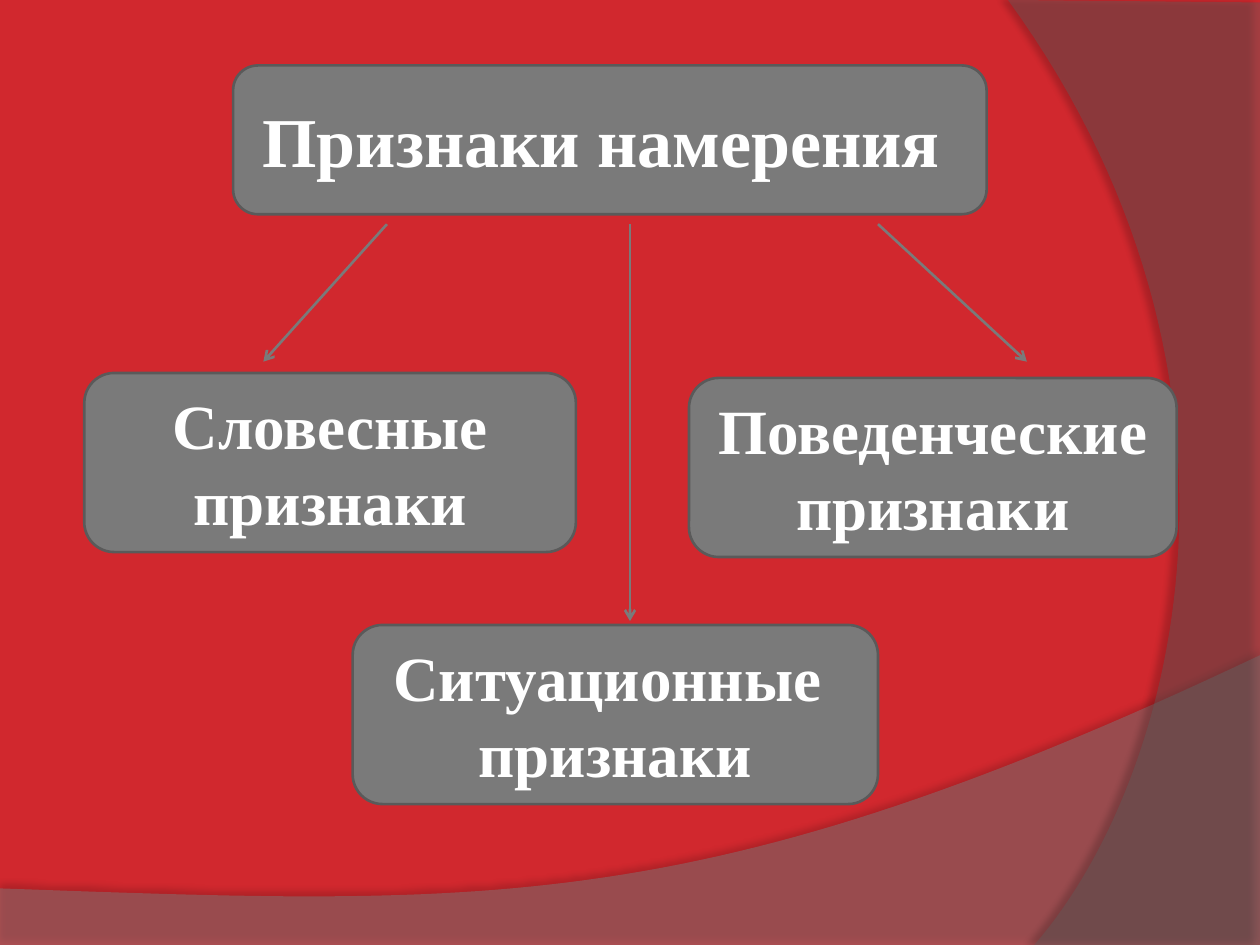
from lxml import etree
from pptx import Presentation
from pptx import util as u
from pptx.dml.color import RGBColor
from pptx.enum import shapes, text
from pptx.oxml.ns import qn

COLORS = {
    "background": "D1282E",
    "wave": "7F7F7F",
    "side": "5E5E5E",
    "box": "7A7A7A",
    "border": "5A5A5A",
    "text": "FFFFFF",
    "shadow": "000000",
}


def rgb(name):
    return RGBColor.from_string(COLORS[name])


def bezier(p0, p1, p2, p3, steps=60):
    """Points along a cubic curve, without its first point."""
    points = []
    for i in range(1, steps + 1):
        t = i / steps
        weights = ((1 - t) ** 3, 3 * t * (1 - t) ** 2, 3 * t * t * (1 - t), t ** 3)
        points.append(tuple(sum(w * p[axis] for w, p in zip(weights, (p0, p1, p2, p3)))
                            for axis in (0, 1)))
    return points


class SlideBuilder:
    font = "Times New Roman"
    line_width = u.Pt(1.5)

    def __init__(self, prs):
        self.slide = prs.slides.add_slide(prs.slide_layouts[6])
        fill = self.slide.background.fill
        fill.solid()
        fill.fore_color.rgb = rgb("background")

    def swoosh(self, corners, controls, end, color, opacity, shadow_opacity, distance, angle):
        """Translucent outline: straight corners, then one curve to its end."""
        points = corners + bezier(corners[-1], *controls, end)
        points = [(u.Cm(x), u.Cm(y)) for x, y in points]
        builder = self.slide.shapes.build_freeform(*points[0])
        builder.add_line_segments(points[1:], close=True)
        sp = builder.convert_to_shape()
        sp.fill.solid()
        sp.fill.fore_color.rgb = rgb(color)
        sp.line.fill.background()
        sp.shadow.inherit = False
        props = sp._element.spPr
        self.set_alpha(props.find(qn("a:solidFill"))[0], opacity)
        shadow = etree.SubElement(
            props.find(qn("a:effectLst")), qn("a:outerShdw"),
            blurRad=str(u.Pt(4)), dist=str(u.Pt(distance)),
            dir=str(angle * 60000), algn="ctr", rotWithShape="0")
        shade = etree.SubElement(shadow, qn("a:srgbClr"), val=COLORS["shadow"])
        self.set_alpha(shade, shadow_opacity)

    @staticmethod
    def set_alpha(color, percent):
        etree.SubElement(color, qn("a:alpha"), val=str(percent * 1000))

    def box(self, left, top, width, height, paragraphs, size=36):
        sp = self.slide.shapes.add_shape(
            shapes.MSO_SHAPE.ROUNDED_RECTANGLE,
            u.Cm(left), u.Cm(top), u.Cm(width), u.Cm(height))
        sp.shadow.inherit = False
        sp.fill.solid()
        sp.fill.fore_color.rgb = rgb("box")
        sp.line.color.rgb = rgb("border")
        sp.line.width = self.line_width
        tf = sp.text_frame
        tf.word_wrap = True
        tf.vertical_anchor = text.MSO_ANCHOR.MIDDLE
        tf.text = "\n".join(paragraphs)
        for p in tf.paragraphs:
            p.alignment = text.PP_ALIGN.CENTER
            p.font.name = self.font
            p.font.size = u.Pt(size)
            p.font.bold = True
            p.font.color.rgb = rgb("text")

    def arrow(self, x1, y1, x2, y2):
        line = self.slide.shapes.add_connector(
            shapes.MSO_CONNECTOR.STRAIGHT, u.Cm(x1), u.Cm(y1), u.Cm(x2), u.Cm(y2))
        line.line.color.rgb = rgb("box")
        line.line.width = self.line_width
        etree.SubElement(line.line._get_or_add_ln(), qn("a:tailEnd"), type="arrow")
        etree.SubElement(line._element.spPr, qn("a:effectLst"))


def main():
    prs = Presentation()
    prs.slide_width, prs.slide_height = u.Cm(25.4), u.Cm(19.05)
    s = SlideBuilder(prs)

    s.swoosh([(0, 17.91), (0, 19.08), (25.4, 19.08), (25.4, 13.21)],
             [(14.2, 18.52), (9.93, 18.26)], (0, 17.91),
             "wave", opacity=45, shadow_opacity=35, distance=3.5, angle=270)
    s.swoosh([(25.4, 0.05), (25.4, 19.05), (20.85, 19.05)],
             [(23.75, 15.72), (25.86, 7.62)], (20.32, 0),
             "side", opacity=40, shadow_opacity=45, distance=4, angle=180)

    s.box(4.7, 1.32, 15.19, 3, ["Признаки намерения "], size=40)
    sign_height = 3.61
    s.box(1.7, 7.52, 9.91, sign_height, ["Словесные признаки"])
    s.box(13.89, 7.62, 9.83, sign_height, ["Поведенческие признаки"])
    s.box(7.11, 12.6, 10.59, sign_height, ["Ситуационные ", "признаки"])

    arrow_top = 4.52
    for x1, x2, y2 in [(17.7, 20.7, 7.29), (7.8, 5.31, 7.29), (12.7, 12.7, 12.52)]:
        s.arrow(x1, arrow_top, x2, y2)

    prs.save("out.pptx")


if __name__ == "__main__":
    main()
